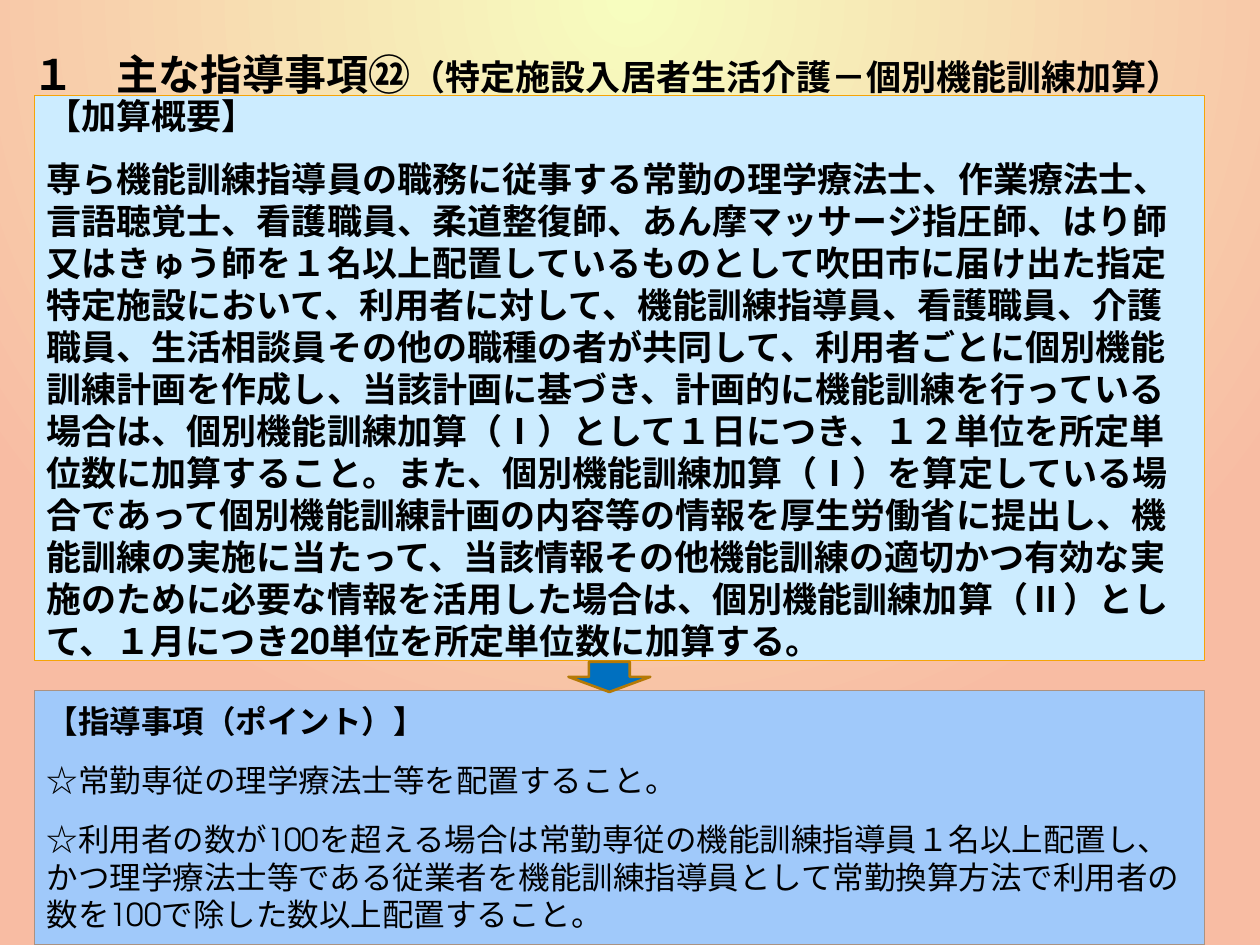
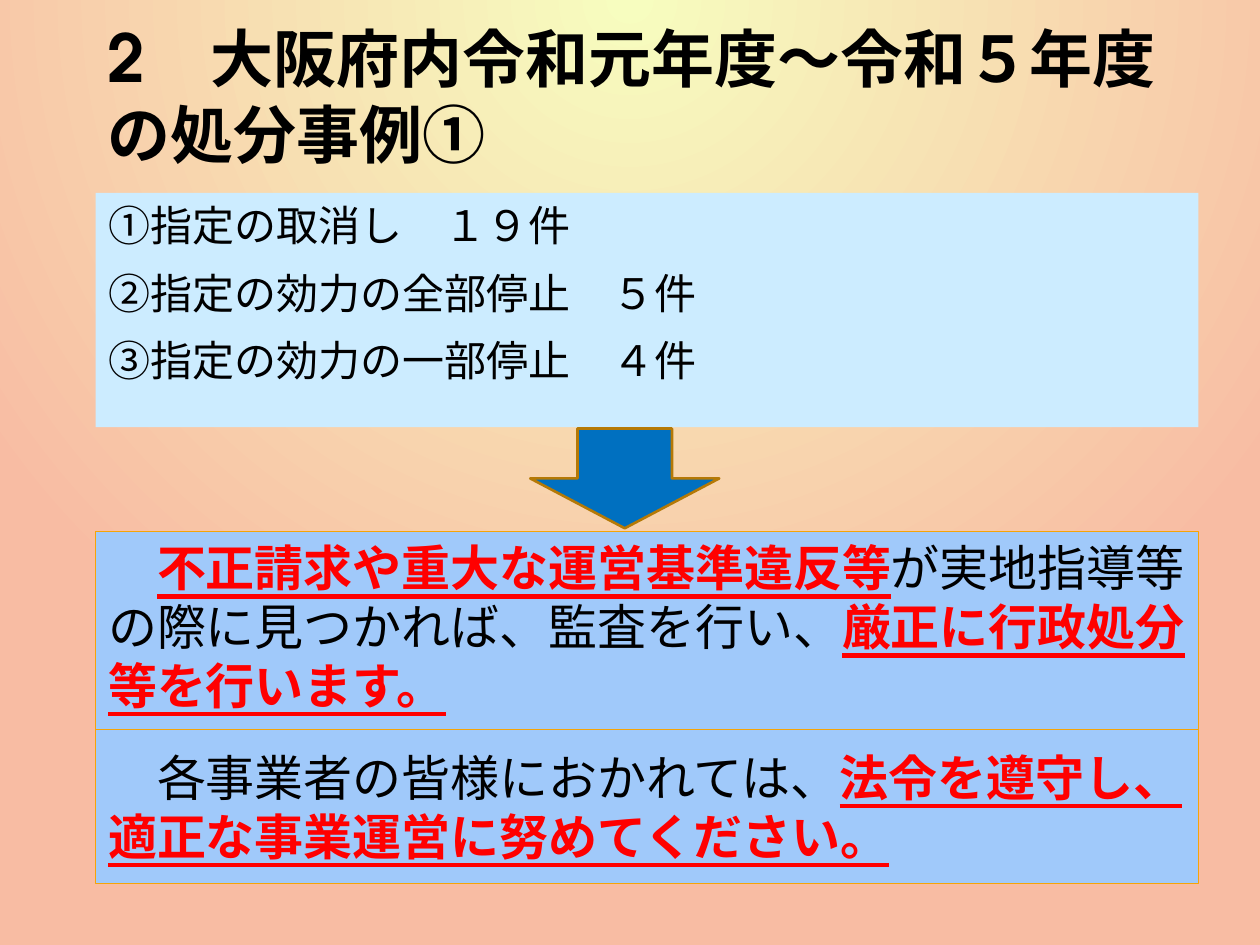
from dataclasses import dataclass

from lxml import etree
from pptx import Presentation
from pptx.dml.color import RGBColor
from pptx.enum.lang import MSO_LANGUAGE_ID
from pptx.enum.shapes import MSO_SHAPE
from pptx.enum.text import MSO_ANCHOR, PP_ALIGN
from pptx.oxml.ns import qn
from pptx.slide import Slide
from pptx.text.text import TextFrame
from pptx.util import Cm, Pt

RECTANGLE = MSO_SHAPE.RECTANGLE
DOWN_ARROW = MSO_SHAPE.DOWN_ARROW
TOP = MSO_ANCHOR.TOP
MIDDLE = MSO_ANCHOR.MIDDLE
LEFT = PP_ALIGN.LEFT
JAPANESE = MSO_LANGUAGE_ID.JAPANESE

FONT = "TeX Gyre Adventor"
BLACK = RGBColor(0x00, 0x00, 0x00)
WARNING_RED = RGBColor(0xFF, 0x00, 0x00)
SUMMARY_BLUE = RGBColor(0xCC, 0xEC, 0xFF)
GUIDANCE_BLUE = RGBColor(0xA0, 0xC9, 0xFA)
ARROW_BLUE = RGBColor(0x00, 0x70, 0xC0)
ARROW_EDGE = RGBColor(0xB5, 0x79, 0x06)
ORANGE = RGBColor(0xF5, 0xA4, 0x08)
TAUPE = RGBColor(0xAB, 0x92, 0x81)
GLOW_YELLOW = RGBColor(0xF7, 0xFD, 0xBF)
GLOW_PINK = RGBColor(0xF8, 0xBC, 0xA3)


@dataclass(frozen=True)
class Area:
    left: float
    top: float
    width: float
    height: float

    def lengths(self) -> tuple[Cm, Cm, Cm, Cm]:
        return Cm(self.left), Cm(self.top), Cm(self.width), Cm(self.height)


@dataclass(frozen=True)
class Phrase:
    text: str
    size: float | None = None
    warning: bool = False


@dataclass(frozen=True)
class Passage:
    phrases: tuple[Phrase, ...]
    size: float
    bold: bool = False
    before: float = 6
    after: float = 6


@dataclass(frozen=True)
class Panel:
    area: Area
    fill: RGBColor
    passages: tuple[Passage, ...]
    edge: RGBColor | None = None
    anchor: MSO_ANCHOR = MIDDLE


@dataclass(frozen=True)
class Page:
    title_area: Area
    title: Passage
    panels: tuple[Panel, ...]
    arrow: Area


def plain(text: str, size: float, bold: bool = False,
          before: float = 6, after: float = 6) -> Passage:
    return Passage((Phrase(text),), size, bold, before, after)


def case_count(text: str) -> Passage:
    return plain(text, 24, before=10, after=0)


def title(*phrases: Phrase, size: float) -> Passage:
    return Passage(phrases, size, bold=True, before=0, after=0)


GUIDANCE_PAGE = Page(
    Area(0.41, 0.86, 23.9, 1.07),
    title(
        Phrase("１　主な指導事項㉒"),
        Phrase("（特定施設入居者生活介護－個別機能訓練加算）", size=20),
        size=24,
    ),
    (
        Panel(
            Area(0.69, 1.93, 23.6, 11.38),
            SUMMARY_BLUE,
            (
                plain("【加算概要】", 20, bold=True),
                plain(
                    "専ら機能訓練指導員の職務に従事する常勤の理学療法士、作業療法士、"
                    "言語聴覚士、看護職員、柔道整復師、あん摩マッサージ指圧師、はり師"
                    "又はきゅう師を１名以上配置しているものとして吹田市に届け出た指定"
                    "特定施設において、利用者に対して、機能訓練指導員、看護職員、介護"
                    "職員、生活相談員その他の職種の者が共同して、利用者ごとに個別機能"
                    "訓練計画を作成し、当該計画に基づき、計画的に機能訓練を行っている"
                    "場合は、個別機能訓練加算（Ⅰ）として１日につき、１２単位を所定単"
                    "位数に加算すること。また、個別機能訓練加算（Ⅰ）を算定している場"
                    "合であって個別機能訓練計画の内容等の情報を厚生労働省に提出し、機"
                    "能訓練の実施に当たって、当該情報その他機能訓練の適切かつ有効な実"
                    "施のために必要な情報を活用した場合は、個別機能訓練加算（Ⅱ）とし"
                    "て、１月につき20単位を所定単位数に加算する。",
                    20,
                    bold=True,
                ),
            ),
            edge=ORANGE,
        ),
        Panel(
            Area(0.69, 13.92, 23.6, 5.13),
            GUIDANCE_BLUE,
            (
                plain("【指導事項（ポイント）】", 18, bold=True),
                plain("☆常勤専従の理学療法士等を配置すること。", 18),
                plain(
                    "☆利用者の数が100を超える場合は常勤専従の機能訓練指導員１名以上配置し、"
                    "かつ理学療法士等である従業者を機能訓練指導員として常勤換算方法で利用者の"
                    "数を100で除した数以上配置すること。",
                    18,
                ),
            ),
            edge=TAUPE,
        ),
    ),
    Area(11.46, 13.34, 1.65, 0.61),
)

PENALTY_PAGE = Page(
    Area(1.91, 0.2, 22.23, 3.1),
    title(
        Phrase("2　", size=37.8),
        Phrase("大阪府内令和元年度～令和５年度の処分事例①"),
        size=36,
    ),
    (
        Panel(
            Area(1.93, 3.89, 22.23, 4.72),
            SUMMARY_BLUE,
            (
                case_count("①指定の取消し　１９件"),
                case_count("②指定の効力の全部停止　５件"),
                case_count("③指定の効力の一部停止　４件"),
            ),
            anchor=TOP,
        ),
        Panel(
            Area(1.93, 10.72, 22.23, 3.99),
            GUIDANCE_BLUE,
            (
                Passage(
                    (
                        Phrase("　"),
                        Phrase("不正請求や重大な運営基準違反等", warning=True),
                        Phrase("が実地指導等の際に見つかれば、監査を行い、"),
                        Phrase("厳正に行政処分等を行います。", warning=True),
                    ),
                    28,
                ),
            ),
            edge=ORANGE,
            anchor=TOP,
        ),
        Panel(
            Area(1.93, 14.71, 22.23, 3.1),
            GUIDANCE_BLUE,
            (
                Passage(
                    (
                        Phrase("　各事業者の皆様におかれては、"),
                        Phrase("法令を遵守し、適正な事業運営に努めてください。", warning=True),
                    ),
                    28,
                ),
            ),
            edge=ORANGE,
        ),
    ),
    Area(10.69, 8.64, 3.81, 2.01),
)


def write_passages(frame: TextFrame, passages: tuple[Passage, ...], anchor: MSO_ANCHOR) -> None:
    frame.word_wrap = True
    frame.vertical_anchor = anchor
    for index, passage in enumerate(passages):
        paragraph = frame.add_paragraph() if index else frame.paragraphs[0]
        paragraph.alignment = LEFT
        paragraph.space_before = Pt(passage.before)
        paragraph.space_after = Pt(passage.after)
        font = paragraph.font
        font.name = FONT
        font.size = Pt(passage.size)
        font.bold = passage.bold
        font.color.rgb = BLACK
        font.language_id = JAPANESE
        latin = next(paragraph._p.iter(qn("a:latin")))
        latin.addnext(latin.makeelement(qn("a:ea"), {"typeface": FONT}))
        for phrase in passage.phrases:
            run = paragraph.add_run()
            run.text = phrase.text
            if phrase.size:
                run.font.size = Pt(phrase.size)
            if phrase.warning:
                run.font.bold = True
                run.font.underline = True
                run.font.color.rgb = WARNING_RED


def draw_panel(slide: Slide, panel: Panel) -> None:
    box = slide.shapes.add_shape(RECTANGLE, *panel.area.lengths())
    box.shadow.inherit = False
    box.fill.solid()
    box.fill.fore_color.rgb = panel.fill
    if panel.edge is None:
        box.line.fill.background()
    else:
        box.line.color.rgb = panel.edge
        box.line.width = Pt(0.75)
    write_passages(box.text_frame, panel.passages, panel.anchor)


def draw_arrow(slide: Slide, area: Area) -> None:
    arrow = slide.shapes.add_shape(DOWN_ARROW, *area.lengths())
    arrow.shadow.inherit = False
    arrow.fill.solid()
    arrow.fill.fore_color.rgb = ARROW_BLUE
    arrow.line.color.rgb = ARROW_EDGE
    arrow.line.width = Pt(1.5)


def draw_page(slide: Slide, page: Page) -> None:
    heading = slide.shapes.add_textbox(*page.title_area.lengths())
    write_passages(heading.text_frame, (page.title,), TOP)
    for panel in page.panels:
        draw_panel(slide, panel)
    draw_arrow(slide, page.arrow)


def set_glow_background(prs: Presentation) -> None:
    master = prs.slide_master
    fill = master.background.fill
    fill.gradient()
    for stop, color, position in zip(fill.gradient_stops, (GLOW_YELLOW, GLOW_PINK), (0, 1)):
        stop.color.rgb = color
        stop.position = position
    gradient = next(master.element.iter(qn("a:gradFill")))
    gradient.remove(gradient.find(qn("a:lin")))
    circle = etree.SubElement(gradient, qn("a:path"), {"path": "circle"})
    etree.SubElement(circle, qn("a:fillToRect"), {"l": "50000", "t": "0", "r": "50000", "b": "100000"})


def main() -> None:
    prs = Presentation()
    prs.slide_width, prs.slide_height = Cm(25.4), Cm(19.05)
    set_glow_background(prs)
    blank = prs.slide_layouts[6]
    for page in (GUIDANCE_PAGE, PENALTY_PAGE):
        draw_page(prs.slides.add_slide(blank), page)
    prs.save("out.pptx")


if __name__ == "__main__":
    main()
